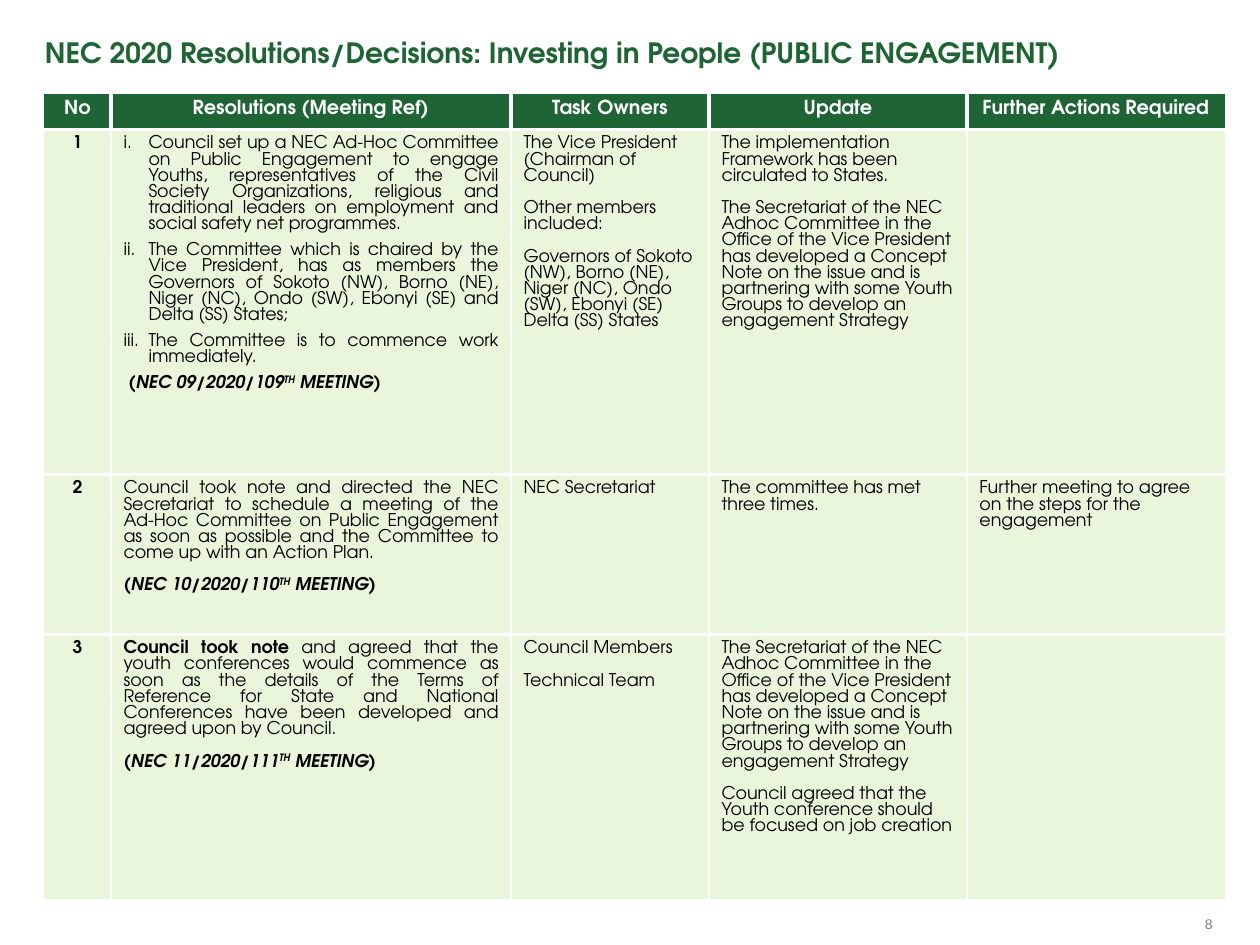
from lxml import etree
from pptx import Presentation
from pptx.dml.color import RGBColor
from pptx.enum.text import MSO_ANCHOR, PP_ALIGN
from pptx.oxml.ns import qn
from pptx.util import Pt

LEFT, MID, JUST = PP_ALIGN.LEFT, PP_ALIGN.CENTER, PP_ALIGN.JUSTIFY
CENTER = MSO_ANCHOR.MIDDLE
PX = 7257.6
FACE = "TeX Gyre Adventor"
INK = {"green": "1E6434", "pale": "E9F6DC", "white": "FFFFFF",
       "black": "000000", "grey": "808080"}

TITLE = "NEC 2020 Resolutions/Decisions: Investing in People (PUBLIC ENGAGEMENT)"
HEADS = ["No", "Resolutions (Meeting Ref)", "Task Owners", "Update",
         "Further Actions Required"]
COLS = [67, 400, 198, 258, 258]
ROWS = [35, 345, 160, 264]
GAP, TIGHT = 9.25, 5.6
FRAME = ("The Secretariat of the NEC Adhoc Committee in the Office of the Vice "
         "President has developed a Concept Note on the issue and is partnering "
         "with some Youth Groups to develop an engagement Strategy")


def ref(text):
    return [(text, "bi"), ("TH", "bis"), (" MEETING)", "bi")]


BODY = [
    {"items": ["Council set up a NEC Ad-Hoc Committee on Public Engagement to engage "
               "Youths, representatives of the Civil Society Organizations, religious "
               "and traditional leaders on employment and social safety net programmes.",
               "The Committee which is chaired by the Vice President, has as members "
               "the Governors of Sokoto (NW), Borno (NE), Niger (NC), Ondo (SW), "
               "Ebonyi (SE) and Delta (SS) States;",
               "The Committee is to commence work immediately."],
     "text": [ref(" (NEC 09/2020/109")],
     "owners": ["The Vice President (Chairman of Council)",
                "Other members included:",
                "Governors of Sokoto (NW), Borno (NE), Niger (NC), Ondo (SW), "
                "Ebonyi (SE) Delta (SS) States"],
     "update": ["The implementation Framework has been circulated to States.", FRAME],
     "action": []},
    {"items": [],
     "text": ["Council took note and directed the NEC Secretariat to schedule a meeting "
              "of the Ad-Hoc Committee on Public Engagement as soon as possible and the "
              "Committee to come up with an Action Plan.",
              ref("(NEC 10/2020/110")],
     "owners": ["NEC Secretariat"],
     "update": ["The committee has met three times."],
     "action": ["Further meeting to agree on the steps for the engagement"]},
    {"items": [],
     "text": [[("Council took note", "b"),
               (" and agreed that the youth conferences would commence as soon as the "
                "details of the Terms of Reference for State and National Conferences "
                "have been developed and agreed upon by Council.", "")],
              ref("(NEC 11/2020/111")],
     "owners": ["Council Members", "Technical Team"],
     "update": [FRAME, "Council agreed that the Youth conference should be focused on "
                       "job creation"],
     "action": []},
]


def px(n):
    return round(n * PX)


def put(para, text, size, ink, style="", face=FACE):
    run = para.add_run()
    run.text = text
    font = run.font
    font.name, font.size = face, Pt(size)
    font.bold, font.italic = "b" in style, "i" in style
    font.color.rgb = RGBColor.from_string(INK[ink])
    if "s" in style:
        run._r.get_or_add_rPr().set("baseline", "30000")


def box(slide, rect, text, size, ink, style="", face=FACE, wrap=True):
    frame = slide.shapes.add_textbox(*map(px, rect)).text_frame
    frame.margin_left = frame.margin_right = 0
    frame.margin_top = frame.margin_bottom = 0
    frame.word_wrap = wrap
    put(frame.paragraphs[0], text, size, ink, style, face)
    return frame


def number(para):
    props = para._p.get_or_add_pPr()
    props.set("marL", str(px(25)))
    props.set("indent", str(-px(25)))
    etree.SubElement(props, qn("a:buFont"), typeface="+mj-lt")
    etree.SubElement(props, qn("a:buAutoNum"), type="romanLcPeriod")


def paint(grid, r, c, ink, side):
    cell = grid.cell(r, c)
    cell.fill.solid()
    cell.fill.fore_color.rgb = RGBColor.from_string(INK[ink])
    props = cell._tc.get_or_add_tcPr()
    edges = [("a:lnL", side, c == 0), ("a:lnR", side, c == len(COLS) - 1),
             ("a:lnT", 2.25, r == 0), ("a:lnB", 2.25, r == len(ROWS) - 1)]
    for spot, (tag, width, outer) in enumerate(edges):
        line = etree.Element(qn(tag), w=str(Pt(width)))
        if outer:
            etree.SubElement(line, qn("a:noFill"))
        else:
            fill = etree.SubElement(line, qn("a:solidFill"))
            etree.SubElement(fill, qn("a:srgbClr"), val=INK["white"])
        props.insert(spot, line)
    return cell


def write(cell, paras, align, size=10, ink="black", style="", items=(), gap=GAP):
    frame = cell.text_frame
    for k, text in enumerate([*items, *paras]):
        para = frame.paragraphs[0] if k == 0 else frame.add_paragraph()
        para.alignment = align
        if k:
            para.space_before = Pt(gap)
        if k < len(items):
            number(para)
        runs = [(text, style)] if isinstance(text, str) else text
        for words, look in runs:
            put(para, words, size, ink, look)


deck = Presentation()
deck.slide_width, deck.slide_height = px(1260), px(945)
slide = deck.slides.add_slide(deck.slide_layouts[6])

page = box(slide, (1205, 915, 18, 18), "8", 8, "grey", face="Arial", wrap=False)
page.vertical_anchor = CENTER

grid = slide.shapes.add_table(len(ROWS), len(COLS), px(44), px(94),
                              px(sum(COLS)), px(sum(ROWS))).table
for col, width in zip(grid.columns, COLS):
    col.width = px(width)
for row, height in zip(grid.rows, ROWS):
    row.height = px(height)

for c, head in enumerate(HEADS):
    write(paint(grid, 0, c, "green", 2.25), [head], MID, 11, "white", "b")

for r, entry in enumerate(BODY, 1):
    cells = [paint(grid, r, c, "pale", 1) for c in range(len(COLS))]
    write(cells[0], [str(r)], MID, style="b")
    write(cells[1], entry["text"], JUST, items=entry["items"],
          gap=TIGHT if entry["items"] else GAP)
    for cell, key in zip(cells[2:], ("owners", "update", "action")):
        write(cell, entry[key], LEFT)

box(slide, (45, 36, 1143, 34), TITLE, 16, "green", "b")

deck.save("out.pptx")
